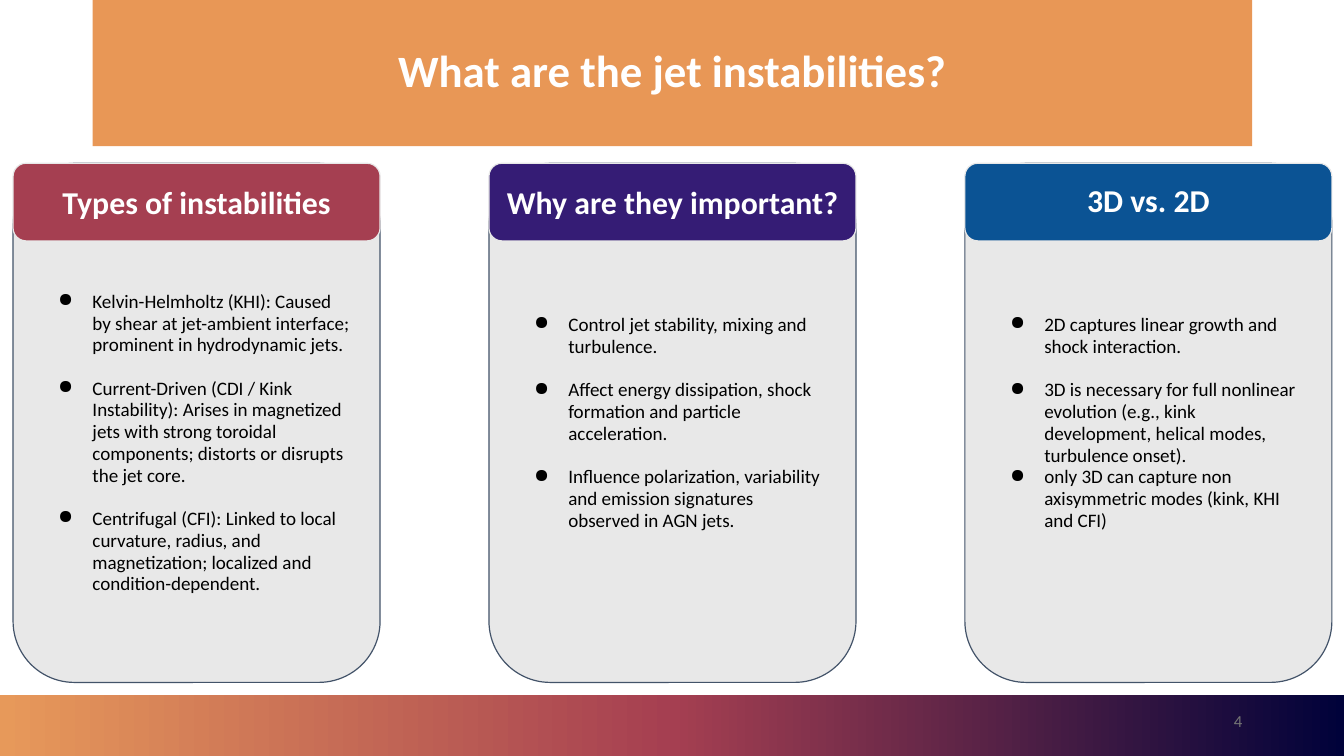
from copy import deepcopy
from dataclasses import dataclass
from lxml import etree
from pptx import Presentation
from pptx import util as u
from pptx.dml.color import RGBColor
from pptx.enum import shapes, text
from pptx.oxml.ns import qn


@dataclass(frozen=True)
class Theme:
    """Colours, font and type sizes of the deck."""
    font: str = "Calibri"
    white: str = "FFFFFF"
    ink: str = "000000"
    mute: str = "757575"
    panel: str = "E8E8E8"
    edge: str = "435369"
    title: str = "E89756"
    ramp: tuple = ("E7995A", "A53F51", "00023A")
    heads: tuple = ("A53F51", "351C75", "0B5394")
    big: float = 32
    mid: float = 22.7
    body: float = 13.6
    small: float = 12
    rule: float = 0.85
    gap: float = 15.6


T = Theme()
WIDE, HIGH = 13.33, 7.5
FOOT = 0.61
EDGE, TOP = 0.13, 1.62
CARD, TALL, HEAD = 3.64, 5.15, 0.77
STEP = (WIDE - 2 * EDGE - CARD) / 2 + 0.005
PAD, LOW = 0.11, 0.51
ROUND = 0.167

CARDS = [
    ("Types of instabilities", 1, LOW, [
        ("Kelvin-Helmholtz (KHI): Caused by shear at jet-ambient interface; "
         "prominent in hydrodynamic jets.", 0),
        ("Current-Driven (CDI / Kink Instability): Arises in magnetized jets with "
         "strong toroidal components; distorts or disrupts the jet core.", T.gap),
        ("Centrifugal (CFI): Linked to local curvature, radius, and magnetization; "
         "localized and condition-dependent.", T.gap)]),
    ("Why are they important?", 1, PAD, [
        ("Control jet stability, mixing and turbulence.", 0),
        ("Affect energy dissipation, shock formation and particle acceleration.", T.gap),
        ("Influence polarization, variability and emission signatures observed in "
         "AGN jets.", T.gap)]),
    ("3D vs. 2D", 0.95, PAD, [
        ("2D captures linear growth and shock interaction.", 0),
        ("3D is necessary for full nonlinear evolution (e.g., kink development, "
         "helical modes, turbulence onset).", T.gap),
        ("only 3D can capture non axisymmetric modes (kink, KHI and CFI)", 0)]),
]


def tint(code):
    """Turn a hex code into a colour."""
    return RGBColor.from_string(code)


def put(obj, **vals):
    """Set each given value on an object."""
    for key, val in vals.items():
        setattr(obj, key, val)


def block(slide, box, fill=None, line=None, kind=shapes.MSO_SHAPE.RECTANGLE):
    """Add a flat shape in a box."""
    shape = slide.shapes.add_shape(kind, *map(u.Inches, box))
    shape.shadow.inherit = False
    if fill:
        shape.fill.solid()
        shape.fill.fore_color.rgb = tint(fill)
    if line:
        shape.line.color.rgb = tint(line)
        shape.line.width = u.Pt(T.rule)
    else:
        shape.line.fill.background()
    if kind == shapes.MSO_SHAPE.ROUNDED_RECTANGLE:
        shape.adjustments[0] = ROUND
    return shape


def frame(shape, side=0.1, top=0.05, low=0.05):
    """Set wrap, anchor and insets of a shape's text."""
    area = shape.text_frame
    put(area, word_wrap=True, vertical_anchor=text.MSO_ANCHOR.MIDDLE,
        margin_left=u.Inches(side), margin_right=u.Inches(side),
        margin_top=u.Inches(top), margin_bottom=u.Inches(low))
    return area


def write(para, words, size, color, bold=False, align="CENTER", lead=1):
    """Fill and format one paragraph."""
    para.text = words
    put(para, alignment=getattr(text.PP_ALIGN, align), line_spacing=lead)
    put(para.font, name=T.font, size=u.Pt(size), bold=bold)
    para.font.color.rgb = tint(color)


def bullet(para):
    """Give a paragraph a hanging round bullet."""
    props = para._p.get_or_add_pPr()
    props.set("marL", str(u.Inches(0.5)))
    props.set("indent", str(u.Inches(-0.34)))
    color = etree.SubElement(props, qn("a:buClr"))
    etree.SubElement(color, qn("a:srgbClr"), val=T.ink)
    etree.SubElement(props, qn("a:buChar"), char="●")


def footer(slide, box, number):
    """Draw the gradient band and page number."""
    left, top, width, height = box
    band = block(slide, box)
    band.fill.gradient()
    band.fill.gradient_angle = 0
    stops = band._element.spPr.find(".//" + qn("a:gsLst"))
    stops.append(deepcopy(stops[-1]))
    for i, (stop, code) in enumerate(zip(band.fill.gradient_stops, T.ramp)):
        stop.position = i / 2
        stop.color.rgb = tint(code)
    spot = (left + width - 3.91, top + 0.06, 3, 0.4)
    page = slide.shapes.add_textbox(*map(u.Inches, spot))
    write(frame(page).paragraphs[0], number, T.small, T.mute, align="RIGHT")


def banner(slide, box, words):
    """Draw the title band."""
    area = frame(block(slide, box, T.title))
    write(area.paragraphs[0], words, T.big, T.white, True, lead=0.9)


def card(slide, box, color, head, lead, top, items):
    """Draw a panel of bullets under a coloured head."""
    kind = shapes.MSO_SHAPE.ROUNDED_RECTANGLE
    area = frame(block(slide, box, T.panel, T.edge, kind), PAD, top, PAD)
    for i, (words, gap) in enumerate(items):
        para = area.add_paragraph() if i else area.paragraphs[0]
        bullet(para)
        write(para, words, T.body, T.ink, align="LEFT", lead=0.95)
        if gap:
            para.space_before = u.Pt(gap)
    cap = block(slide, (*box[:3], HEAD), color, T.panel, kind)
    area = frame(cap, PAD, PAD, PAD)
    write(area.paragraphs[0], head, T.mid, T.white, True, lead=lead)


def main():
    """Build and save the slide."""
    deck = Presentation()
    put(deck, slide_width=u.Inches(WIDE), slide_height=u.Inches(HIGH))
    slide = deck.slides.add_slide(deck.slide_layouts[6])
    footer(slide, (0, HIGH - FOOT, WIDE, FOOT), "4")
    banner(slide, (0.92, 0, 11.5, 1.45), "What are the jet instabilities?")
    for i, (color, parts) in enumerate(zip(T.heads, CARDS)):
        card(slide, (EDGE + i * STEP, TOP, CARD, TALL), color, *parts)
    deck.save("out.pptx")


if __name__ == "__main__":
    main()
